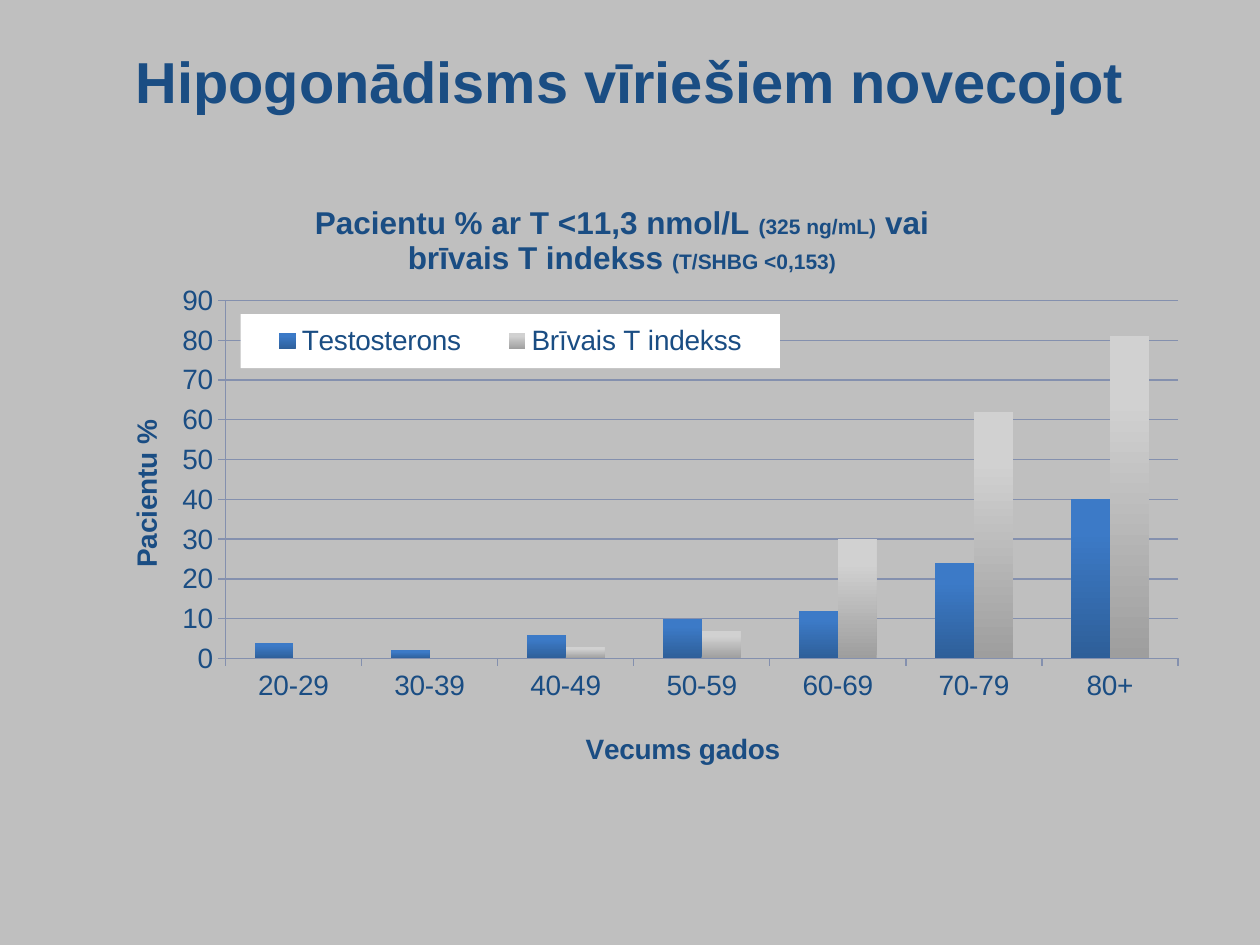
from lxml import etree
from pptx import Presentation, util as u
from pptx.chart.data import CategoryChartData
from pptx.dml.color import RGBColor
from pptx.enum import chart as ch, text as tx
from pptx.oxml.ns import qn

NAVY = RGBColor(0x1A, 0x4D, 0x83)
GREY = RGBColor(0xBF, 0xBF, 0xBF)
RULE = RGBColor(0x84, 0x90, 0xAE)
WHITE = RGBColor(0xFF, 0xFF, 0xFF)
BLUES = (RGBColor(0x2E, 0x5F, 0x99), RGBColor(0x3C, 0x7A, 0xC7))
SILVERS = (RGBColor(0x9E, 0x9E, 0x9E), RGBColor(0xD1, 0xD1, 0xD1))

WIDE, HIGH = u.Inches(10), u.Inches(7.5)
AGES = ["20-29", "30-39", "40-49", "50-59", "60-69", "70-79", "80+"]
SERIES = [
    ("Testosterons", [4, 2, 6, 10, 12, 24, 40], BLUES),
    ("Brīvais T indekss", [None, None, 3, 7, 30, 62, 81], SILVERS),
]
HEADING = [
    [("Pacientu % ar T <11,3 nmol/L ", 18), ("(325 ng/mL)", 12), (" vai", 18)],
    [("brīvais T indekss ", 18), ("(T/SHBG <0,153)", 12)],
]


def share(x, y, w, h):
    return [int(v) for v in (x * WIDE, y * HIGH, w * WIDE, h * HIGH)]


def style(font, size, bold=False):
    form = {"name": "Arial", "size": u.Pt(size), "bold": bold}
    for key, val in form.items():
        setattr(font, key, val)
    font.color.rgb = NAVY


def write(frame, lines):
    for i, line in enumerate(lines):
        par = frame.paragraphs[0] if i == 0 else frame.add_paragraph()
        par.alignment = tx.PP_ALIGN.CENTER
        for words, size in line:
            run = par.add_run()
            run.text = words
            style(run.font, size, True)


def place(part, after, inner=False, **box):
    for old in part.findall(qn("c:layout")):
        part.remove(old)
    lay = etree.Element(qn("c:layout"))
    man = etree.SubElement(lay, qn("c:manualLayout"))
    vals = {"layoutTarget": "inner"} if inner else {}
    vals.update({"xMode": "edge", "yMode": "edge"}, **box)
    for key, val in vals.items():
        etree.SubElement(man, qn("c:" + key)).set("val", str(val))
    spot = 0
    if after:
        spot = part.index(part.find(qn("c:" + after))) + 1
    part.insert(spot, lay)


def add_title(slide):
    title = slide.shapes.title
    form = dict(zip(("left", "top", "width", "height"),
                    share(0.03, 0.04, 0.94, 0.09)))
    for key, val in form.items():
        setattr(title, key, val)
    frame = title.text_frame
    frame.vertical_anchor = tx.MSO_ANCHOR.MIDDLE
    write(frame, [[("Hipogonādisms vīriešiem novecojot", 33)]])


def set_axis(axis, name, x, y):
    write(axis.axis_title.text_frame, [[(name, 16)]])
    place(axis.axis_title._element, "tx", x=x, y=y)
    style(axis.tick_labels.font, 16)
    axis.major_tick_mark = ch.XL_TICK_MARK.OUTSIDE
    axis.format.line.color.rgb = RULE


def set_legend(chart):
    chart.has_legend = True
    legend = chart.legend
    legend.position = ch.XL_LEGEND_POSITION.TOP
    legend.include_in_layout = False
    style(legend.font, 16)
    part = legend._element
    place(part, "legendPos", x=0.17, y=0.22, w=0.46, h=0.08)
    look = etree.Element(qn("c:spPr"))
    fill = etree.SubElement(look, qn("a:solidFill"))
    etree.SubElement(fill, qn("a:srgbClr")).set("val", str(WHITE))
    part.find(qn("c:txPr")).addprevious(look)


def paint(series, shades):
    fill = series.format.fill
    fill.gradient()
    fill.gradient_angle = 90
    for stop, shade, at in zip(fill.gradient_stops, shades, (0, 0.8)):
        stop.color.rgb = shade
        stop.position = at
    series.invert_if_negative = False


def add_bars(slide):
    data = CategoryChartData()
    data.categories = AGES
    for name, vals, _ in SERIES:
        data.add_series(name, vals)
    chart = slide.shapes.add_chart(
        ch.XL_CHART_TYPE.COLUMN_CLUSTERED,
        *share(0.033, 0.175, 0.93, 0.715), data).chart
    style(chart.font, 16)
    chart.has_title = True
    write(chart.chart_title.text_frame, HEADING)
    place(chart.chart_title._element, "tx", x=0.23, y=0.05)
    plot = chart.plots[0]
    form = {"gap_width": 150, "overlap": 0, "vary_by_categories": False}
    for key, val in form.items():
        setattr(plot, key, val)
    for series, (_, _, shades) in zip(plot.series, SERIES):
        paint(series, shades)
    set_axis(chart.category_axis, "Vecums gados", 0.46, 0.83)
    axis = chart.value_axis
    set_axis(axis, "Pacientu %", 0.07, 0.37)
    form = {"minimum_scale": 0, "maximum_scale": 90, "major_unit": 10}
    for key, val in form.items():
        setattr(axis, key, val)
    axis.major_gridlines.format.line.color.rgb = RULE
    set_legend(chart)
    area = chart._chartSpace.chart.plotArea
    place(area, None, True, x=0.157, y=0.2, w=0.813, h=0.53)


def main():
    deck = Presentation()
    deck.slide_width, deck.slide_height = WIDE, HIGH
    slide = deck.slides.add_slide(deck.slide_layouts[5])
    slide.background.fill.solid()
    slide.background.fill.fore_color.rgb = GREY
    add_title(slide)
    add_bars(slide)
    deck.save("out.pptx")


if __name__ == "__main__":
    main()
